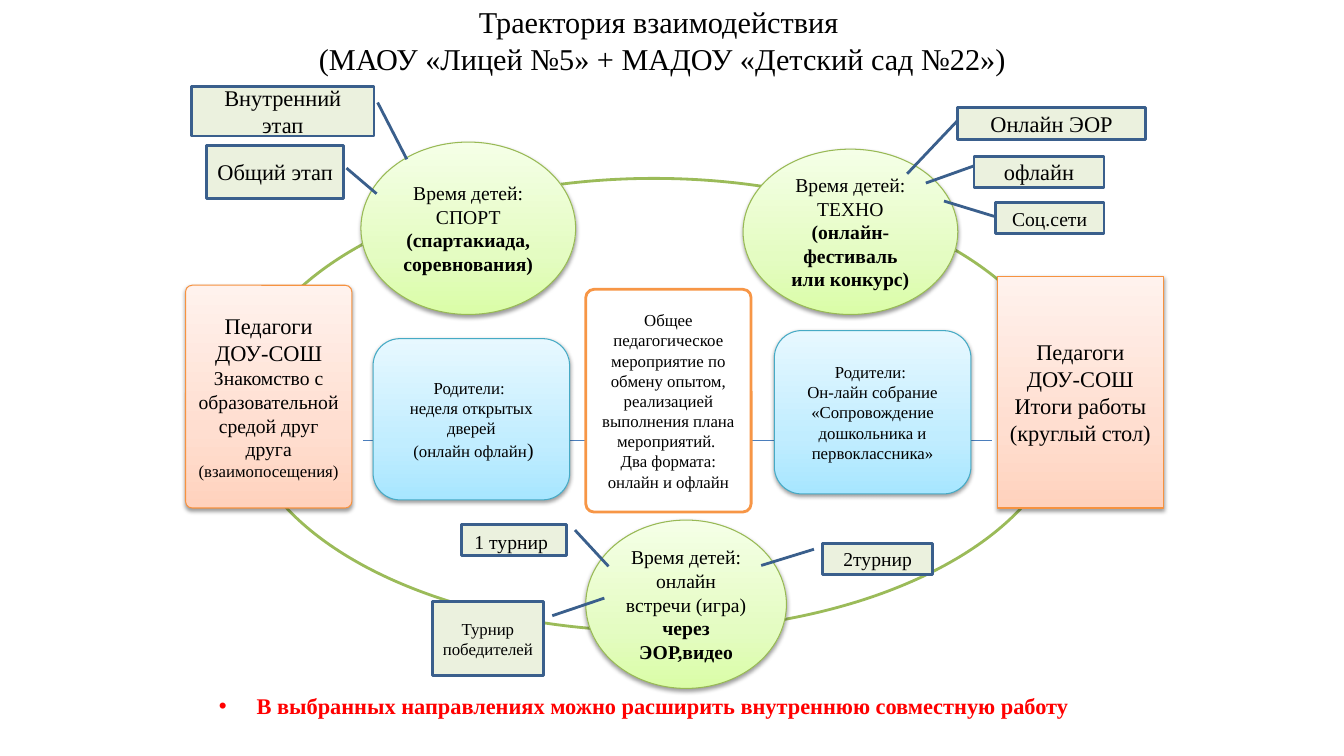
"""Build the slide on the path of joint work between a school and a kindergarten."""
from copy import deepcopy

from lxml import etree
from pptx import Presentation
from pptx import util as u
from pptx.dml.color import RGBColor
from pptx.enum import shapes, text
from pptx.oxml.ns import qn

KIND = shapes.MSO_SHAPE
CELL = 0.1
SERIF = "Times New Roman"
GREEN = (("DAFDA7", "E4FCC2", "F5FFE7"), "98B955")
PEACH = (("FFD2BD", "FFDED0", "FFF2ED"), "F69240")
BLUE = (("A7E6FF", "C1EDFF", "E7F8FF"), "46AAC5")


def grid(*cells):
    """Turn grid cells into slide lengths."""
    return [u.Inches(cell * CELL) for cell in cells]


def paint(target, tone):
    """Give a fill, line or font colour format a hex colour."""
    target.rgb = RGBColor.from_string(tone)


def write(shape, *paras, size=14, tone="000000", bold=False, align="CENTER", mid=True):
    """Write paragraphs, each a string or a list of (text, format) runs."""
    frame = shape.text_frame
    frame.word_wrap = True
    frame.auto_size = text.MSO_AUTO_SIZE.NONE
    frame.vertical_anchor = text.MSO_ANCHOR.MIDDLE if mid else text.MSO_ANCHOR.TOP
    for at, para in enumerate(paras):
        line = frame.paragraphs[0] if at == 0 else frame.add_paragraph()
        line.alignment = text.PP_ALIGN[align]
        for words, look in [(para, {})] if isinstance(para, str) else para:
            for part, piece in enumerate(words.split("\n")):
                if part:
                    line.add_line_break()
                run = line.add_run()
                run.text = piece
                run.font.name = look.get("font", SERIF)
                run.font.size = u.Pt(look.get("size", size))
                run.font.bold = look.get("bold", bold)
                paint(run.font.color, tone)


def block(page, kind, box, fill, edge, width=2):
    """Add a plain filled and outlined shape."""
    shape = page.shapes.add_shape(kind, *grid(*box))
    shape.shadow.inherit = False
    shape.fill.solid()
    paint(shape.fill.fore_color, fill)
    paint(shape.line.color, edge)
    shape.line.width = u.Pt(width)
    return shape


def glow(page, kind, box, theme, *paras, curve=None, **look):
    """Add a shape with a three-tone gradient, a soft shadow and text."""
    tones, edge = theme
    shape = block(page, kind, box, tones[0], edge, 0.75)
    if curve is not None:
        shape.adjustments[0] = curve
    shape.fill.gradient()
    shape.fill.gradient_angle = 90
    props = shape._element.spPr
    stops = props.find(".//" + qn("a:gsLst"))
    stops.insert(1, deepcopy(stops[0]))
    for stop, spot, tone in zip(shape.fill.gradient_stops, (0, 0.35, 1), tones):
        stop.position = spot
        paint(stop.color, tone)
    shade = etree.SubElement(props.find(qn("a:effectLst")), qn("a:outerShdw"),
                             blurRad=str(u.Pt(3.1)), dist=str(u.Pt(1.6)),
                             dir="5400000", rotWithShape="0")
    black = etree.SubElement(shade, qn("a:srgbClr"), val="000000")
    etree.SubElement(black, qn("a:alpha"), val="38000")
    write(shape, *paras, **look)


def label(page, box, lead, words, size=14, flip=False):
    """Add a callout whose lead line is given as shares of its box."""
    shape = block(page, KIND.LINE_CALLOUT_1, box, "EBF1DE", "3A5F8C")
    for at, share in enumerate(lead):
        shape.adjustments[at] = share
    if flip:
        shape._element.spPr.find(qn("a:xfrm")).set("flipH", "1")
    write(shape, words, size=size)


def holder(shape, box, words, **look):
    """Move a placeholder onto the grid and fill it."""
    shape.left, shape.top, shape.width, shape.height = grid(*box)
    write(shape, words, **look)


def rule(page, start, end):
    """Add a thin straight line."""
    line = page.shapes.add_connector(shapes.MSO_CONNECTOR.STRAIGHT, *grid(*start, *end))
    paint(line.line.color, "4B7EBC")
    line.line.width = u.Pt(0.75)
    etree.SubElement(line._element.spPr, qn("a:effectLst"))


def main():
    """Compose and save the slide."""
    deck = Presentation()
    deck.slide_width, deck.slide_height = u.Inches(13.33), u.Inches(7.5)
    page = deck.slides.add_slide(deck.slide_layouts[1])
    title, body = page.placeholders
    holder(title, (20.7, -0.3, 90, 8.5),
           "Траектория взаимодействия \n(МАОУ «Лицей №5» + МАДОУ «Детский сад №22»)", size=21.6)
    holder(body, (20.7, 68.2, 90, 4.3),
           "В выбранных направлениях можно расширить внутреннюю совместную работу",
           size=16, tone="FF0000", bold=True, align="LEFT", mid=False)

    block(page, KIND.OVAL, (23.9, 17.7, 81.9, 44.9), "FFFFFF", "9BBB59")
    for box, plain, strong in (
        ((35.8, 14.1, 21.3, 17.1), "Время детей: СПОРТ ", "(спартакиада, соревнования)"),
        ((58.1, 51.6, 19.9, 16.7), "Время детей: онлайн встречи (игра) ", "через ЭОР,видео"),
        ((73.7, 14.8, 21.3, 16.4), "Время детей: ТЕХНО ", "(онлайн- фестиваль или конкурс)"),
    ):
        glow(page, KIND.OVAL, box, GREEN, [(plain, {}), (strong, {"bold": True})])

    staff = "Педагоги ДОУ-СОШ"
    glow(page, KIND.ROUNDED_RECTANGLE, (18.4, 28.3, 16.5, 22.1), PEACH, staff,
         [("Знакомство с образовательной средой друг друга ", {"size": 14}),
          ("(взаимопосещения)", {"size": 12})], curve=0.04, size=16)
    glow(page, KIND.ROUNDED_RECTANGLE, (98.9, 27.4, 16.5, 23), PEACH, staff,
         "Итоги работы", "(круглый стол)", curve=0, size=16)

    rule(page, (36, 43.7), (98.4, 43.7))
    kin = "Родители: "
    glow(page, KIND.ROUNDED_RECTANGLE, (37, 33.6, 19.5, 16), BLUE, kin,
         "неделя открытых дверей",
         [(" (онлайн офлайн", {}), (")", {"size": 14})], size=12)
    glow(page, KIND.ROUNDED_RECTANGLE, (76.8, 32.8, 19.5, 16.2), BLUE, kin,
         "Он-лайн собрание «Сопровождение дошкольника и первоклассника»", size=12)

    label(page, (95, 10.7, 18.6, 3.1), (0.4, 0, 2.11, -0.27), "Онлайн ЭОР", 16)
    label(page, (96.6, 15.5, 12.9, 3.1), (0.31, 0, 0.86, -0.37), "офлайн", 16)
    label(page, (98.7, 20.1, 10.8, 3.1), (0.44, -0.01, -0.05, -0.47), "Соц.сети")
    label(page, (19, 8.6, 18.1, 4.9), (0.32, -0.02, 1.47, -0.18), "Внутренний этап", 16, True)
    label(page, (20.5, 14.4, 13.6, 5.3), (0.43, -0.02, 0.91, -0.24), "Общий этап", 16, True)
    label(page, (45.8, 52, 10.4, 3.1), (0.19, -0.08, 1.35, -0.4),
          [("1 турнир", {}), (" ", {"size": 18, "font": "Calibri"})], flip=True)
    label(page, (42.9, 59.7, 11, 7.3), (0.19, -0.08, -0.05, -0.55),
          "Турнир победителей", 12, True)
    label(page, (81.6, 53.9, 10.9, 3.1), (0.19, -0.08, 0.71, -0.56), "2турнир")

    hub = block(page, KIND.ROUNDED_RECTANGLE, (58.1, 28.7, 16.4, 22.1), "FFFFFF", "F79646")
    hub.adjustments[0] = 0.05
    write(hub, "Общее педагогическое мероприятие по обмену опытом, "
          "реализацией выполнения плана мероприятий. ",
          "Два формата: онлайн и офлайн", size=12)
    deck.save("out.pptx")


if __name__ == "__main__":
    main()
